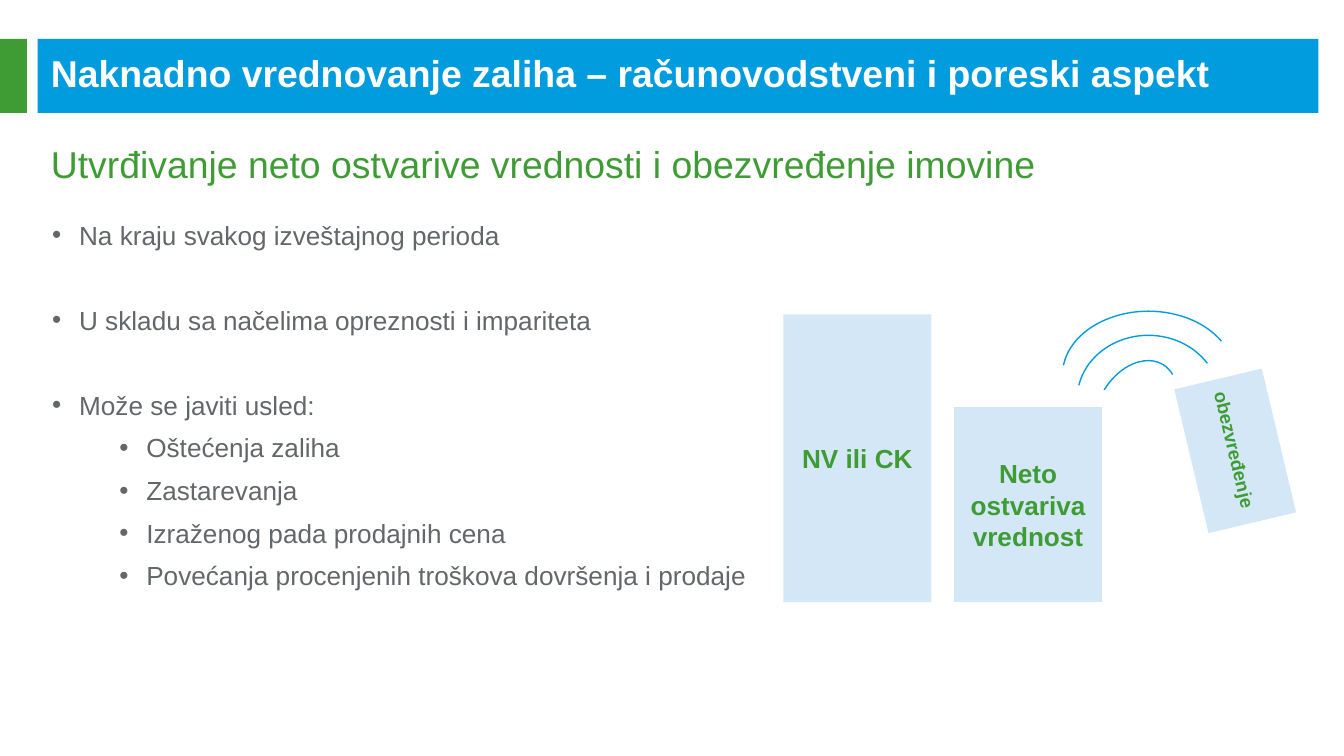
from pptx import Presentation
from pptx.dml.color import RGBColor
from pptx.enum.shapes import MSO_SHAPE
from pptx.enum.text import MSO_ANCHOR, PP_ALIGN
from pptx.oxml.ns import qn
from pptx.util import Inches, Pt
from lxml.etree import SubElement

COLOURS = {
    "blue": "009CDE",
    "green": "3F9C35",
    "grey": "63666A",
    "pale": "D4E7F7",
    "white": "FFFFFF",
}


class SlideBuilder:
    font_name = "Arial"

    def __init__(self, page):
        self.page = page

    def colour(self, name):
        return RGBColor.from_string(COLOURS[name])

    def style(self, para, size, colour, bold=False):
        font = para.font
        font.name, font.size, font.bold = self.font_name, Pt(size), bold
        font.color.rgb = self.colour(colour)

    def rect(self, bounds, fill):
        shape = self.page.shapes.add_shape(MSO_SHAPE.RECTANGLE, *map(Inches, bounds))
        shape.shadow.inherit = False
        shape.fill.solid()
        shape.fill.fore_color.rgb = self.colour(fill)
        shape.line.fill.background()
        return shape

    def label(self, bounds, lines, size=14, align=PP_ALIGN.CENTER, rotation=0):
        shape = self.rect(bounds, "pale")
        shape.rotation = rotation
        frame = shape.text_frame
        frame.word_wrap = True
        frame.vertical_anchor = MSO_ANCHOR.MIDDLE
        if rotation:
            frame.margin_right = 0
        frame.text = "\n".join(lines)
        for para in frame.paragraphs:
            para.alignment = align
            self.style(para, size, "green", bold=True)

    def text_box(self, bounds, anchor=MSO_ANCHOR.TOP):
        frame = self.page.shapes.add_textbox(*map(Inches, bounds)).text_frame
        frame.word_wrap = True
        frame.vertical_anchor = anchor
        return frame

    def heading(self, bounds, text, colour, bold=False, anchor=MSO_ANCHOR.TOP):
        frame = self.text_box(bounds, anchor)
        frame.text = text
        self.style(frame.paragraphs[0], 20, colour, bold)

    def bullets(self, bounds, items):
        frame = self.text_box(bounds)
        frame.text = "\n".join(text for text, _, _ in items)
        for para, (_, level, space_after) in zip(frame.paragraphs, items):
            para.level = level
            para.space_after = Pt(space_after)
            properties = para._p.get_or_add_pPr()
            properties.set("marL", str(Inches(0.2 + 0.5 * level)))
            properties.set("indent", str(Inches(-0.2)))
            SubElement(properties, qn("a:buFont"), typeface=self.font_name)
            SubElement(properties, qn("a:buChar"), char="•")
            self.style(para, 14, "grey")

    def arc(self, bounds, rotation, ends):
        shape = self.page.shapes.add_shape(MSO_SHAPE.ARC, *map(Inches, bounds))
        shape.shadow.inherit = False
        shape.rotation = rotation
        shape.fill.background()
        shape.line.color.rgb = self.colour("blue")
        shape.line.width = Pt(0.75)
        for index, end in enumerate(ends):
            shape.adjustments[index] = end


def main():
    deck = Presentation()
    deck.slide_width = Inches(10)
    deck.slide_height = deck.slide_width * 9 // 16
    builder = SlideBuilder(deck.slides.add_slide(deck.slide_layouts[6]))

    # Title bar and subtitle
    builder.rect((0.28, 0.29, 9.53, 0.55), "blue")
    builder.rect((0, 0.29, 0.2, 0.55), "green")
    builder.heading((0.28, 0.39, 9.45, 0.3),
                    "Naknadno vrednovanje zaliha – računovodstveni i poreski aspekt",
                    "white", bold=True, anchor=MSO_ANCHOR.MIDDLE)
    builder.heading((0.28, 1, 9.53, 0.53),
                    "Utvrđivanje neto ostvarive vrednosti i obezvređenje imovine",
                    "green")

    # Bullets: text, level, space after
    builder.bullets((0.29, 1.58, 9.52, 2.89), [
        ("Na kraju svakog izveštajnog perioda", 0, 28.8),
        ("U skladu sa načelima opreznosti i impariteta", 0, 28.8),
        ("Može se javiti usled:", 0, 6),
        ("Oštećenja zaliha", 1, 6),
        ("Zastarevanja", 1, 6),
        ("Izraženog pada prodajnih cena", 1, 6),
        ("Povećanja procenjenih troškova dovršenja i prodaje", 1, 6),
    ])

    # Value columns and the part that falls off
    builder.label((5.83, 2.34, 1.1, 2.14), ["NV ili CK"])
    builder.label((7.1, 3.03, 1.1, 1.45), ["Neto ostvariva", "vrednost"])
    builder.label((8.64, 3.02, 1.1, 0.67), ["obezvređenje"], size=10,
                  align=PP_ALIGN.LEFT, rotation=76.6)

    # Motion arcs
    builder.arc((8.07, 2.44, 0.95, 1.06), 270, (168.74, 35.2))
    builder.arc((8.06, 2.77, 0.78, 0.55), 301.6, (162, 9.12))
    builder.arc((8.07, 2.15, 0.95, 1.28), 270, (165.93, 39.09))

    deck.save("out.pptx")


if __name__ == "__main__":
    main()
